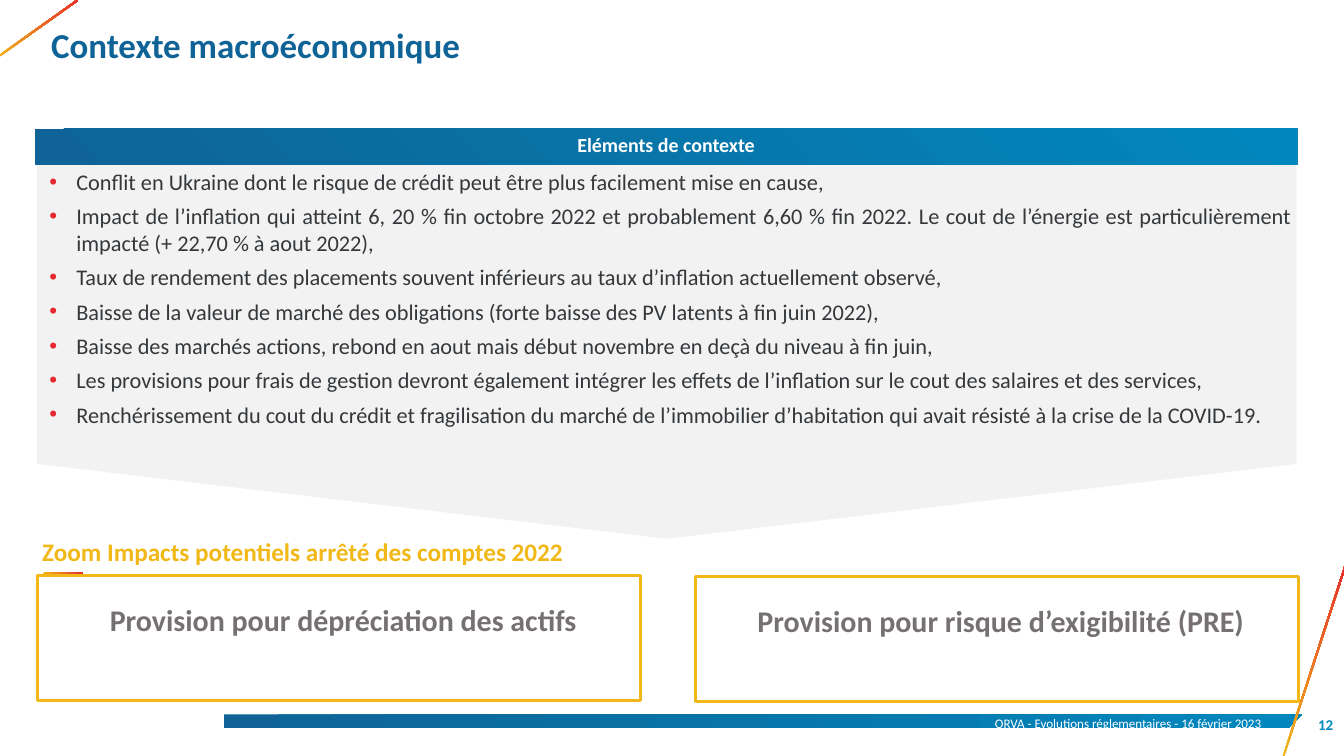
"""Build the slide on the macroeconomic context and its effects on the 2022 accounts."""
from lxml import etree
from pptx import Presentation
from pptx.dml.color import RGBColor
from pptx.enum.shapes import MSO_SHAPE
from pptx.enum.text import MSO_ANCHOR, PP_ALIGN
from pptx.oxml.ns import qn
from pptx.util import Inches, Pt

RECTANGLE = MSO_SHAPE.RECTANGLE
POINTED_PANEL = MSO_SHAPE.FLOWCHART_OFFPAGE_CONNECTOR
TOP, MIDDLE = MSO_ANCHOR.TOP, MSO_ANCHOR.MIDDLE
LEFT, CENTER = PP_ALIGN.LEFT, PP_ALIGN.CENTER
RIGHT, JUSTIFY = PP_ALIGN.RIGHT, PP_ALIGN.JUSTIFY

BLUES = ("0F6396", "0087BD")
FLAMES = ("F2B818", "E62930")
WHITE, GOLD, RED = "FFFFFF", "F2B818", "E62930"

deck = Presentation()
deck.slide_width, deck.slide_height = Inches(14.96), Inches(8.41)
CELL = deck.slide_width // 96
slide = deck.slides.add_slide(deck.slide_layouts[6])


def paint(fill, *colours, angle=0):
    """Fill with one hex colour, or with a gradient between two."""
    if len(colours) == 1:
        fill.solid()
        fill.fore_color.rgb = RGBColor.from_string(colours[0])
        return
    fill.gradient()
    fill.gradient_angle = angle
    for stop, colour in zip(fill.gradient_stops, colours):
        stop.color.rgb = RGBColor.from_string(colour)


def write(box, *lines, kind=None, back=(), angle=0, border=None, size=16, ink=(WHITE,),
          bold=False, align=LEFT, anchor=TOP, insets=(0.04, 0.04, 0.04, 0.04), bullet=None):
    """Place a text box or a preset shape, given in grid cells, with its paragraphs."""
    place = [int(cells * CELL) for cells in box]
    if kind is None:
        shape = slide.shapes.add_textbox(*place)
    else:
        shape = slide.shapes.add_shape(kind, *place)
        shape.shadow.inherit = False
        paint(shape.fill, *back, angle=angle)
        if border:
            paint(shape.line.fill, border)
            shape.line.width = Pt(2.25)
        else:
            shape.line.fill.background()
    frame = shape.text_frame
    frame.word_wrap = True
    frame.vertical_anchor = anchor
    frame.margin_left, frame.margin_top, frame.margin_right, frame.margin_bottom = map(Inches, insets)
    for index, line in enumerate(lines):
        paragraph = frame.add_paragraph() if index else frame.paragraphs[0]
        if bullet:
            properties = paragraph._p.get_or_add_pPr()
            properties.set("marL", str(Inches(0.4)))
            properties.set("indent", str(Inches(-0.3)))
            colour = etree.SubElement(properties, qn("a:buClr"))
            etree.SubElement(colour, qn("a:srgbClr"), val=bullet)
            etree.SubElement(properties, qn("a:buFont"), typeface="Arial")
            etree.SubElement(properties, qn("a:buChar"), char="•")
        paragraph.alignment = align
        if index:
            paragraph.space_before = Pt(6)
        run = paragraph.add_run()
        run.text = line
        run.font.name, run.font.size, run.font.bold = "Calibri", Pt(size), bold
        paint(run.font.fill, *ink, angle=45)
    return shape


outline = slide.shapes.build_freeform(16.04, 51.24, scale=CELL)
outline.add_line_segments([(92.6, 51.24), (92.22, 52.27), (15.59, 52.27)], close=True)
footer_band = outline.convert_to_shape()
footer_band.shadow.inherit = False
footer_band.line.fill.background()
paint(footer_band.fill, *BLUES)

for left, top, width, rotation in [
    (86.5, 46.94, 14.89, 288),
    (-0.64, 1.93, 6.8, 324.6),
    (3.08, 40.9, 2.82, 0),
]:
    accent = write((left, top, width, 0.13), kind=RECTANGLE, back=FLAMES, angle=320)
    accent.rotation = rotation

write(
    (2.63, 11.75, 89.97, 26.71),
    "Conflit en Ukraine dont le risque de crédit peut être plus facilement mise en cause,",
    "Impact de l’inflation qui atteint 6, 20 % fin octobre 2022 et probablement 6,60 % fin 2022. "
    "Le cout de l’énergie est particulièrement impacté (+ 22,70 % à aout 2022),",
    "Taux de rendement des placements souvent inférieurs au taux d’inflation actuellement observé,",
    "Baisse de la valeur de marché des obligations (forte baisse des PV latents à fin juin 2022),",
    "Baisse des marchés actions, rebond en aout mais début novembre en deçà du niveau à fin juin,",
    "Les provisions pour frais de gestion devront également intégrer les effets de l’inflation "
    "sur le cout des salaires et des services,",
    "Renchérissement du cout du crédit et fragilisation du marché de l’immobilier d’habitation "
    "qui avait résisté à la crise de la COVID-19.",
    kind=POINTED_PANEL, back=("F2F2F2",), size=17.9, ink=("35383B",), align=JUSTIFY, bullet=RED)

write((3.4, 1.41, 89.2, 5.78), "Contexte macroéconomique", size=28, ink=BLUES[:1], bold=True)
write((20.02, 50.79, 70.72, 1.73), "ORVA - Evolutions réglementaires - 16 février 2023",
      size=10.5, align=RIGHT, anchor=MIDDLE, insets=(0.1, 0.05, 0.1, 0.05))
write((91.57, 50.98, 3.66, 1.48), "12", size=12, ink=BLUES[1:], bold=True,
      align=RIGHT, anchor=MIDDLE, insets=(0, 0, 0, 0))
write((2.5, 9.18, 90.16, 2.57), "Eléments de contexte", kind=RECTANGLE, back=BLUES, angle=45,
      bold=True, align=CENTER)
write((2.76, 38.01, 43.06, 2.7), "Zoom Impacts potentiels arrêté des comptes 2022",
      size=20.2, ink=FLAMES, bold=True, align=JUSTIFY)

for left, top, provision in [
    (2.7, 41.1, "Provision pour dépréciation des actifs"),
    (49.67, 41.16, "Provision pour risque d’exigibilité (PRE)"),
]:
    write((left, top, 43.06, 8.93), provision, kind=RECTANGLE, back=(WHITE,), border=GOLD,
          size=24, ink=("767171",), bold=True, align=CENTER, anchor=MIDDLE,
          insets=(0.13, 0.04, 0.04, 0.45))

deck.save("out.pptx")
